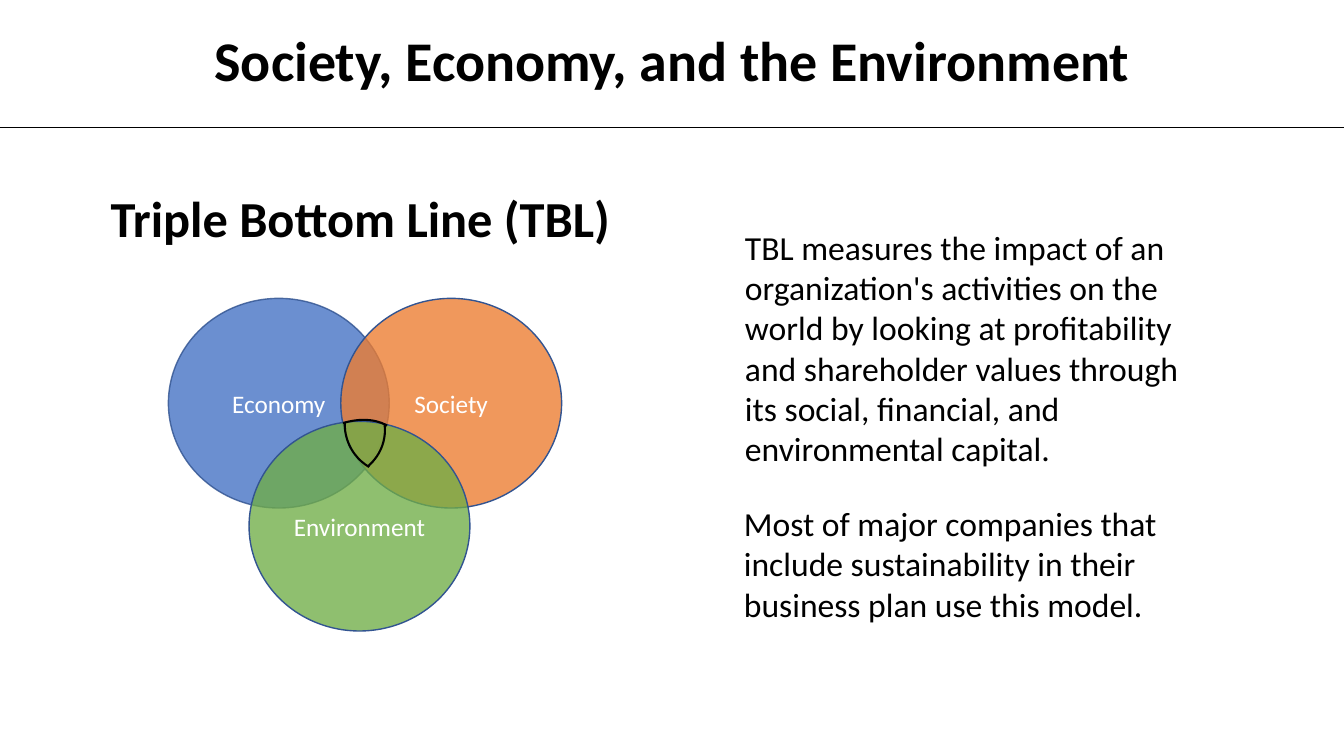
from dataclasses import dataclass
from typing import Any

from lxml.etree import SubElement
from pptx import Presentation
from pptx.dml.color import RGBColor as RGB
from pptx.enum.shapes import MSO_CONNECTOR as CONNECTOR, MSO_SHAPE as SHAPE
from pptx.enum.text import MSO_ANCHOR as ANCHOR, MSO_AUTO_SIZE as AUTO, PP_ALIGN as ALIGN
from pptx.oxml.ns import qn
from pptx.util import Inches, Pt


@dataclass(frozen=True)
class Theme:
    font: str = "Calibri"
    black: str = "000000"
    white: str = "FFFFFF"
    outline: str = "325491"
    blue: str = "4472C4"
    orange: str = "ED7D31"
    green: str = "70AD47"
    heading: int = 40
    title: int = 36
    body: int = 24
    label: int = 18


@dataclass(frozen=True)
class Box:
    left: float
    top: float
    width: float
    height: float

    def inches(self) -> tuple:
        return tuple(Inches(v) for v in (self.left, self.top, self.width, self.height))


@dataclass(frozen=True)
class Circle:
    label: str
    left: float
    top: float
    color: str
    alpha: int
    line_alpha: int = 100


@dataclass(frozen=True)
class Arc:
    box: Box
    rotation: float
    end: float


@dataclass(frozen=True)
class Note:
    text: str
    box: Box
    size: int
    bold: bool = False
    wrap: bool = True
    align: Any = ALIGN.LEFT
    space_before: int = 0


THEME = Theme()
SLIDE_W, SLIDE_H = 13.33, 7.5
CIRCLE_W, CIRCLE_H = 2.19, 2.08
ARC_START = 166.56
RULE_Y = 1.26
TITLE = Note("Triple Bottom Line (TBL)", Box(0.4, 1.87, 6.35, 0.65),
             THEME.title, bold=True, align=ALIGN.CENTER)
CIRCLES = (
    Circle("Economy", 1.67, 2.96, THEME.blue, 79, 81),
    Circle("Society", 3.38, 2.96, THEME.orange, 79),
    Circle("Environment", 2.47, 4.18, THEME.green, 78),
)
ARCS = (
    Arc(Box(3.42, 3.71, 0.98, 0.99), 202.5, 203.8),
    Arc(Box(2.97, 4.19, 1.02, 0.69), 339.3, 203.8),
    Arc(Box(2.86, 3.79, 0.93, 0.99), 73.4, 199.62),
)
NOTES = (
    Note("TBL measures the impact of an organization's activities on the world by looking at "
         "profitability and shareholder values through its social, financial, and "
         "environmental capital.", Box(7.29, 2.2, 4.79, 2.52), THEME.body),
    Note("Most of major companies that include sustainability in their business plan use "
         "this model.", Box(7.28, 4.94, 4.77, 1.31), THEME.body),
    Note("Society, Economy, and the Environment", Box(1.97, 0.2, 9.39, 0.77), THEME.heading,
         bold=True, wrap=False, align=ALIGN.CENTER, space_before=1),
)


def apply(target: Any, values: dict) -> None:
    for name, value in values.items():
        setattr(target, name, value)


def write(tf: Any, text: str, size: int, color: str, bold: bool, **paragraph: Any) -> None:
    p = tf.paragraphs[0]
    apply(p, paragraph)
    r = p.add_run()
    r.text = text
    apply(r.font, {"name": THEME.font, "size": Pt(size), "bold": bold})
    r.font.color.rgb = RGB.from_string(color)


def paint(fill: Any, color: str, alpha: int, owner: Any) -> None:
    fill.solid()
    fill.fore_color.rgb = RGB.from_string(color)
    if alpha < 100:
        clr = owner.find(qn("a:solidFill")).find(qn("a:srgbClr"))
        SubElement(clr, qn("a:alpha")).set("val", str(alpha * 1000))


def add_title(slide: Any, note: Note) -> None:
    sp = slide.shapes.title
    apply(sp, dict(zip(("left", "top", "width", "height"), note.box.inches())))
    apply(sp.text_frame, {"word_wrap": True, "auto_size": AUTO.SHAPE_TO_FIT_TEXT,
                          "vertical_anchor": ANCHOR.MIDDLE})
    write(sp.text_frame, note.text, note.size, THEME.black, note.bold,
          alignment=note.align, line_spacing=0.9)


def add_circle(slide: Any, circle: Circle) -> None:
    box = Box(circle.left, circle.top, CIRCLE_W, CIRCLE_H)
    sp = slide.shapes.add_shape(SHAPE.OVAL, *box.inches())
    sp.shadow.inherit = False
    sp_pr = sp._element.spPr
    paint(sp.fill, circle.color, circle.alpha, sp_pr)
    sp.line.width = Pt(1)
    paint(sp.line.fill, THEME.outline, circle.line_alpha, sp_pr.find(qn("a:ln")))
    sp.text_frame.vertical_anchor = ANCHOR.MIDDLE
    write(sp.text_frame, circle.label, THEME.label, THEME.white, False, alignment=ALIGN.CENTER)


def add_arc(slide: Any, arc: Arc) -> None:
    sp = slide.shapes.add_shape(SHAPE.ARC, *arc.box.inches())
    sp.shadow.inherit = False
    sp.rotation = arc.rotation
    sp.adjustments[0] = ARC_START
    sp.adjustments[1] = arc.end
    sp.fill.background()
    sp.line.width = Pt(1.5)
    sp.line.color.rgb = RGB.from_string(THEME.black)


def add_note(slide: Any, note: Note) -> None:
    tf = slide.shapes.add_textbox(*note.box.inches()).text_frame
    apply(tf, {"word_wrap": note.wrap, "auto_size": AUTO.SHAPE_TO_FIT_TEXT})
    write(tf, note.text, note.size, THEME.black, note.bold,
          alignment=note.align, space_before=Pt(note.space_before))


def add_rule(slide: Any, y: float) -> None:
    line = slide.shapes.add_connector(
        CONNECTOR.STRAIGHT, 0, Inches(y), Inches(SLIDE_W), Inches(y))
    line.line.width = Pt(0.5)
    line.line.color.rgb = RGB.from_string(THEME.black)
    SubElement(line._element.spPr, qn("a:effectLst"))


def main() -> None:
    prs = Presentation()
    apply(prs, {"slide_width": Inches(SLIDE_W), "slide_height": Inches(SLIDE_H)})
    slide = prs.slides.add_slide(prs.slide_layouts[5])
    add_title(slide, TITLE)
    for circle in CIRCLES:
        add_circle(slide, circle)
    for arc in ARCS:
        add_arc(slide, arc)
    for note in NOTES:
        add_note(slide, note)
    add_rule(slide, RULE_Y)
    prs.save("out.pptx")


if __name__ == "__main__":
    main()
